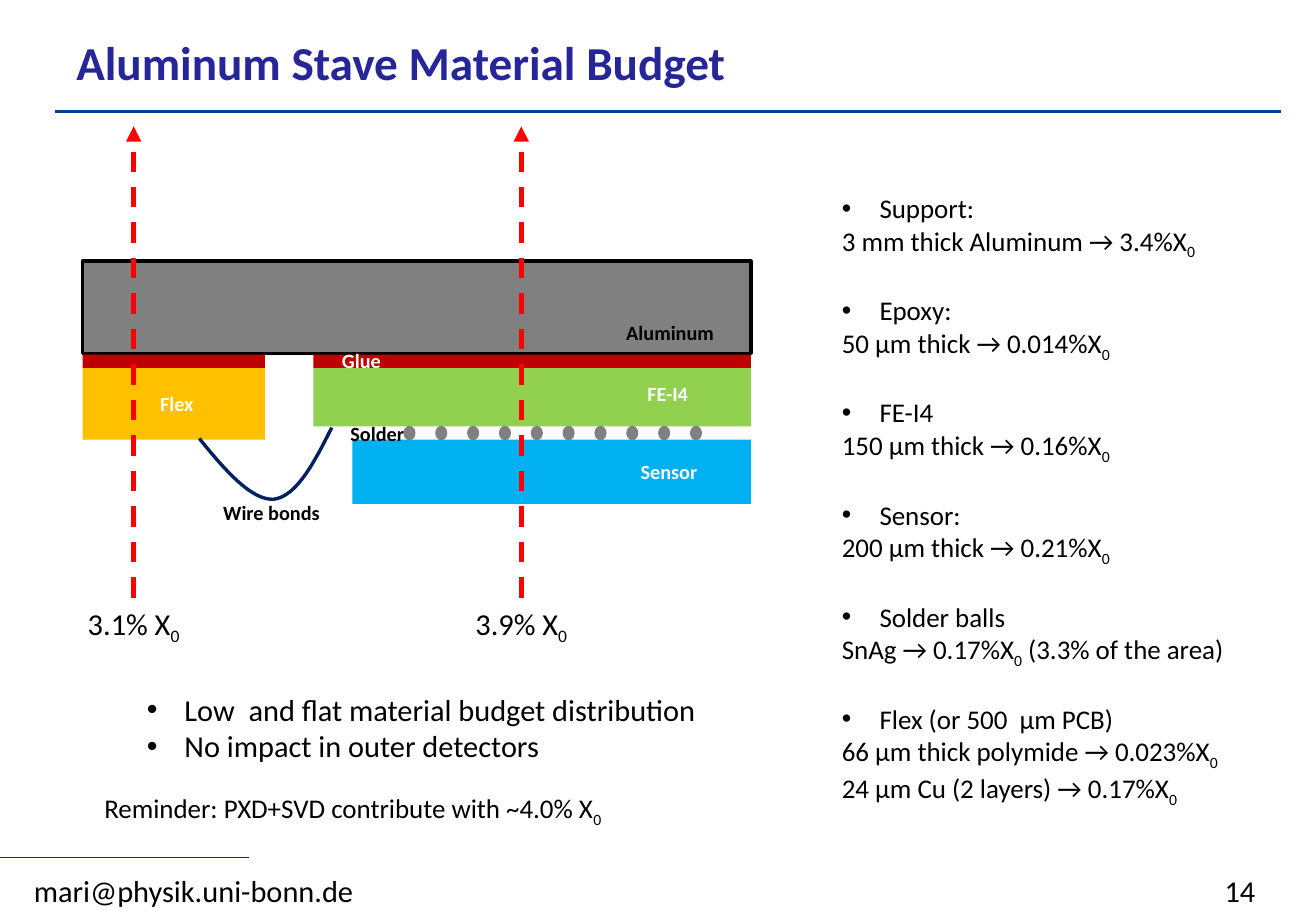
"""Build the slide on the material budget of an aluminum stave."""
from lxml.etree import SubElement
from pptx import Presentation
from pptx.dml.color import RGBColor
from pptx.enum.dml import MSO_LINE
from pptx.enum.shapes import MSO_CONNECTOR, MSO_SHAPE
from pptx.enum.text import MSO_ANCHOR, PP_ALIGN
from pptx.oxml.ns import qn
from pptx.util import Inches, Pt

BLACK = RGBColor(0, 0, 0)
WHITE = RGBColor(255, 255, 255)
NAVY = RGBColor(0x26, 0x26, 0x99)
BLUE = RGBColor(0, 0x42, 0x92)
DARK = RGBColor(0, 0x33, 0x66)
WIRE = RGBColor(0, 0x20, 0x60)
GRAY = RGBColor(0x80, 0x80, 0x80)
GREEN = RGBColor(0x92, 0xD0, 0x50)
SKY = RGBColor(0, 0xB0, 0xF0)
GOLD = RGBColor(0xFF, 0xC0, 0)
GLUE = RGBColor(0xC0, 0, 0)
RED = RGBColor(255, 0, 0)

WIDE, HIGH = 108.3, 75
LEFT, CHIP, RIGHT = 6.8, 25.8, 61.8
FLEX = 15

LAYERS = [
    (LEFT, 21.5, RIGHT - LEFT, 7.6, GRAY, BLACK),
    (CHIP, 30.2, RIGHT - CHIP, 4.9, GREEN, None),
    (29, 36.2, RIGHT - 29, 5.3, SKY, None),
    (LEFT, 30.2, FLEX, 6, GOLD, None),
    (CHIP, 29.2, RIGHT - CHIP, 1.1, GLUE, None),
    (LEFT, 29.2, FLEX, 1.1, GLUE, None),
]
LABELS = [
    ("Aluminum", 47, 25.9, BLACK),
    ("FE-I4", 46.8, 30.9, WHITE),
    ("Sensor", 46.9, 37.3, WHITE),
    ("Wire bonds", 14.2, 40.7, BLACK),
    ("Flex", 6.4, 31.7, WHITE),
    ("Glue", 21.6, 28.2, WHITE),
    ("Solder", 22.9, 34.2, BLACK),
]
BUDGET = [
    ("Support:", ["3 mm thick Aluminum → 3.4%X|0"]),
    ("Epoxy:", ["50 µm thick → 0.014%X|0"]),
    ("FE-I4", ["150 µm thick → 0.16%X|0"]),
    ("Sensor:", ["200 µm thick → 0.21%X|0"]),
    ("Solder balls", ["SnAg → 0.17%X|0| (3.3% of the area)"]),
    ("Flex (or 500  µm PCB)", ["66 µm thick polymide → 0.023%X|0",
                               "24 µm Cu (2 layers) → 0.17%X|0"]),
]
POINTS = ["Low  and flat material budget distribution", "No impact in outer detectors"]
BEND = [
    [(27.3, 35.2), (25.9, 38), (24.4, 40.9), (22.5, 41.1)],
    [(22.5, 41.1), (20.7, 41.2), (18.5, 38.7), (16.4, 36.1)],
]


def cell(*units):
    """Turn grid units, ten to the inch, into lengths."""
    return [Inches(unit / 10) for unit in units]


def text_box(slide, place, anchor=MSO_ANCHOR.TOP):
    """Add an empty wrapping text box and return its frame."""
    frame = slide.shapes.add_textbox(*cell(*place)).text_frame
    frame.word_wrap = True
    frame.vertical_anchor = anchor
    return frame


def write(para, text, size, color=BLACK, bold=False, align=PP_ALIGN.LEFT):
    """Fill a paragraph run by run; every second part is a subscript."""
    para.alignment = align
    for index, part in enumerate(text.split("|")):
        run = para.add_run()
        run.text = part
        font = run.font
        font.name, font.size, font.bold = "Calibri", Pt(size), bold
        font.color.rgb = color
        if index % 2:
            run._r.get_or_add_rPr().set("baseline", "-25000")


def label(slide, text, place, size, **style):
    """Add a text box with one paragraph."""
    anchor = style.pop("anchor", MSO_ANCHOR.TOP)
    write(text_box(slide, place, anchor).paragraphs[0], text, size, **style)


def next_para(frame):
    """Return the empty first paragraph or a new one."""
    first = frame.paragraphs[0]
    return frame.add_paragraph() if first.runs else first


def bullet(frame, text, size, gap=0):
    """Add a bulleted paragraph with a gap above all but the first."""
    para = next_para(frame)
    if gap and para is not frame.paragraphs[0] and len(frame.paragraphs) > 1:
        para.space_before = Pt(gap)
    props = para._p.get_or_add_pPr()
    props.set("marL", str(Inches(0.31)))
    props.set("indent", str(-Inches(0.31)))
    SubElement(props, qn("a:buFont")).set("typeface", "Arial")
    SubElement(props, qn("a:buChar")).set("char", "•")
    write(para, text, size)


def block(slide, kind, place, fill, edge=None):
    """Add a flat filled shape, outlined if an edge colour is given."""
    shape = slide.shapes.add_shape(kind, *cell(*place))
    shape.shadow.inherit = False
    shape.fill.solid()
    shape.fill.fore_color.rgb = fill
    if edge is None:
        shape.line.fill.background()
    else:
        shape.line.color.rgb = edge
        shape.line.width = Pt(2)


def rule(slide, ends, color, width):
    """Add a straight line without shadow."""
    link = slide.shapes.add_connector(MSO_CONNECTOR.STRAIGHT, *cell(*ends))
    link.line.color.rgb = color
    link.line.width = Pt(width)
    SubElement(link._element.spPr, qn("a:effectLst"))
    return link


def beam(slide, col, text):
    """Add a dashed upward arrow with its material value below."""
    link = rule(slide, (col, 49.2, col, 10.4), RED, 3)
    link.line.dash_style = MSO_LINE.DASH
    SubElement(link.line._get_or_add_ln(), qn("a:tailEnd")).set("type", "triangle")
    label(slide, text, (col - 5.7, 49.3, 11.4, 4), 18, align=PP_ALIGN.CENTER)


def curve(knots, steps=20):
    """Return points along a cubic curve."""
    spots = []
    for step in range(1, steps + 1):
        t = step / steps
        parts = ((1 - t) ** 3, 3 * t * (1 - t) ** 2, 3 * t * t * (1 - t), t ** 3)
        spots.append(cell(*(sum(p * k[axis] for p, k in zip(parts, knots))
                            for axis in (0, 1))))
    return spots


def bond(slide):
    """Add the bent wire between chip and flex."""
    build = slide.shapes.build_freeform(*cell(*BEND[0][0]))
    build.add_line_segments([spot for knots in BEND for spot in curve(knots)], close=False)
    wire = build.convert_to_shape()
    wire.shadow.inherit = False
    wire.fill.background()
    wire.line.color.rgb = WIRE
    wire.line.width = Pt(2)


def stave(slide):
    """Draw the cross section of the stave."""
    for *place, fill, edge in LAYERS:
        block(slide, MSO_SHAPE.RECTANGLE, place, fill, edge)
    for ball in range(10):
        block(slide, MSO_SHAPE.OVAL, (33.2 + 2.62 * ball, 35.05, 1, 1.2), GRAY)
    bond(slide)
    for text, col, row, color in LABELS:
        label(slide, text, (col, row, 16.3, 3), 12, color=color, bold=True,
              align=PP_ALIGN.CENTER)
    beam(slide, 42.9, "3.9% X|0")
    beam(slide, 11, "3.1% X|0")


def main():
    """Build and save the slide."""
    deck = Presentation()
    deck.slide_width, deck.slide_height = cell(WIDE, HIGH)
    slide = deck.slides.add_slide(deck.slide_layouts[6])
    rule(slide, (4.5, 9.2, 105.4, 9.2), BLUE, 1.5)
    rule(slide, (0, 70.6, 20.5, 70.6), DARK, 0.75)
    label(slide, "Aluminum Stave Material Budget", (5.3, 1.7, 94.9, 6.7), 28,
          color=NAVY, bold=True, anchor=MSO_ANCHOR.MIDDLE)
    stave(slide)
    side = text_box(slide, (68.3, 15.3, 39, 49.5))
    for head, lines in BUDGET:
        bullet(side, head, 16, gap=19.5)
        for line in lines:
            write(next_para(side), line, 16)
    notes = text_box(slide, (11.1, 56.4, 49.1, 7.1))
    for point in POINTS:
        bullet(notes, point, 18)
    label(slide, "Reminder: PXD+SVD contribute with ~4.0% X|0", (7.6, 64.7, 55.8, 3.7), 16)
    label(slide, "mari@physik.uni-bonn.de", (1.8, 71.3, 80.1, 2.8), 18)
    label(slide, "14", (81.7, 71.3, 22.6, 2.8), 18, align=PP_ALIGN.RIGHT)
    deck.save("out.pptx")


if __name__ == "__main__":
    main()
